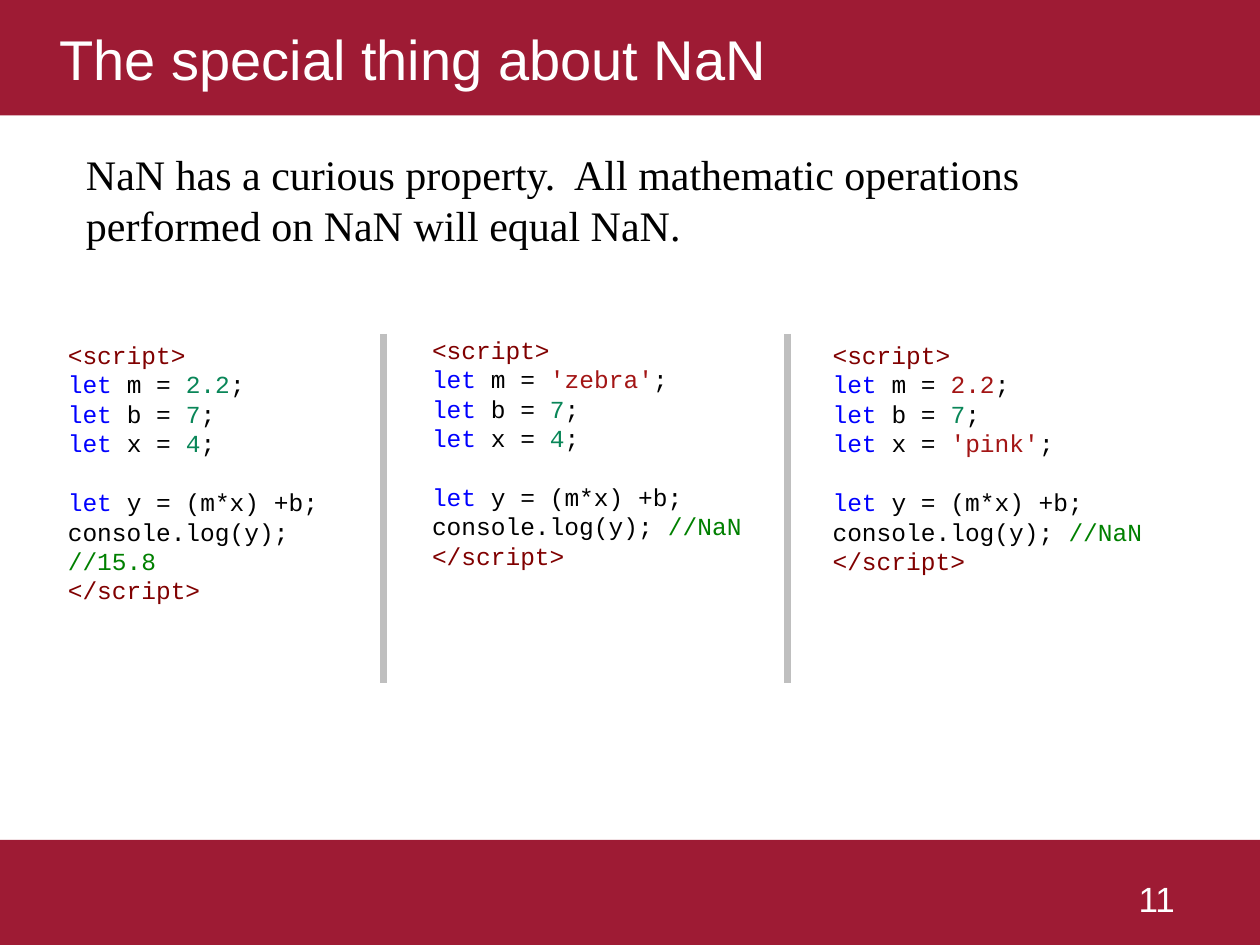
"""Build the slide on how NaN spreads through arithmetic."""
from lxml import etree
from pptx import Presentation
from pptx.dml.color import RGBColor
from pptx.enum.shapes import MSO_CONNECTOR, MSO_SHAPE
from pptx.enum.text import MSO_ANCHOR, MSO_AUTO_SIZE, PP_ALIGN
from pptx.oxml.ns import qn
from pptx.util import Pt

STRAIGHT, RECTANGLE = MSO_CONNECTOR.STRAIGHT, MSO_SHAPE.RECTANGLE
MIDDLE, NO_FIT = MSO_ANCHOR.MIDDLE, MSO_AUTO_SIZE.NONE
LEFT, RIGHT = PP_ALIGN.LEFT, PP_ALIGN.RIGHT

CRIMSON = RGBColor(0x9E, 0x1B, 0x34)
WHITE = RGBColor(0xFF, 0xFF, 0xFF)
BLACK = RGBColor(0, 0, 0)
GREY = RGBColor(0xBF, 0xBF, 0xBF)
TAG = RGBColor(0x80, 0, 0)
KEYWORD = RGBColor(0, 0, 0xFF)
NUMBER = RGBColor(0x09, 0x86, 0x58)
STRING = RGBColor(0xA3, 0x15, 0x15)
COMMENT = RGBColor(0, 0x80, 0)

TITLE = "The special thing about NaN"
STATEMENT = ("NaN has a curious property.  All mathematic operations "
             "performed on NaN will equal NaN.")
PAGE_NUMBER = "11 "
EXAMPLES = [
    {"at": (31.7, 190.8), "m": ("2.2", NUMBER), "x": ("4", NUMBER), "result": "//15.8"},
    {"at": (239.8, 187.9), "m": ("'zebra'", STRING), "x": ("4", NUMBER), "result": "//NaN"},
    {"at": (468.7, 190.8), "m": ("2.2", STRING), "x": ("'pink'", STRING), "result": "//NaN"},
]
DIVIDERS = [218.9, 450]
DIVIDER_TOP, DIVIDER_BOTTOM = 190.8, 390.2
CODE_SIZE = (198.7, 172)
BLANK_LINE = 16.8

TITLE_FONT = {"name": "Arial", "size": Pt(32), "color": WHITE}
PAGE_FONT = {"name": "Arial", "size": Pt(20), "color": WHITE}
STATEMENT_FONT = {"name": "Times New Roman", "size": Pt(24), "color": BLACK}
CODE_FONT = {"name": "Courier New", "size": Pt(14)}


def add_span(para, text, font):
    span = para.add_run()
    span.text = text
    for name, value in font.items():
        if name == "color":
            span.font.color.rgb = value
        else:
            setattr(span.font, name, value)


def add_text_box(slide, left, top, width, height):
    box = slide.shapes.add_textbox(Pt(left), Pt(top), Pt(width), Pt(height))
    box.text_frame.word_wrap = True
    return box.text_frame


def assignment(name, value):
    return [("let", KEYWORD), (f" {name} = ", BLACK), value, (";", BLACK)]


def code_lines(example):
    return [
        [("<script>", TAG)],
        assignment("m", example["m"]),
        assignment("b", ("7", NUMBER)),
        assignment("x", example["x"]),
        [("let", KEYWORD), (" y = (m*x) +b;", BLACK)],
        [("console.log(y); ", BLACK), (example["result"], COMMENT)],
        [("</script>", TAG)],
    ]


def add_example(slide, example):
    frame = add_text_box(slide, *example["at"], *CODE_SIZE)
    for index, line in enumerate(code_lines(example)):
        para = frame.add_paragraph() if index else frame.paragraphs[0]
        if line[-1][0].endswith("+b;"):
            para.space_before = Pt(BLANK_LINE)
        for text, color in line:
            add_span(para, text, {**CODE_FONT, "color": color})


def add_divider(slide, x):
    line = slide.shapes.add_connector(
        STRAIGHT, Pt(x), Pt(DIVIDER_TOP), Pt(x), Pt(DIVIDER_BOTTOM))
    line.line.color.rgb = GREY
    line.line.width = Pt(4)
    etree.SubElement(line._element.spPr, qn("a:effectLst"))


def add_title(slide):
    title = slide.shapes.title
    title.left, title.top, title.width, title.height = Pt(0), Pt(0), Pt(720), Pt(66)
    title.fill.solid()
    title.fill.fore_color.rgb = CRIMSON
    frame = title.text_frame
    frame.auto_size = NO_FIT
    frame.vertical_anchor = MIDDLE
    frame.margin_left = Pt(34)
    frame.paragraphs[0].alignment = LEFT
    add_span(frame.paragraphs[0], TITLE, TITLE_FONT)


def add_footer(slide):
    band = slide.shapes.add_shape(RECTANGLE, Pt(0), Pt(480), Pt(720), Pt(60))
    band.shadow.inherit = False
    band.fill.solid()
    band.fill.fore_color.rgb = CRIMSON
    band.line.fill.background()
    para = add_text_box(slide, 516, 498, 168, 24).paragraphs[0]
    para.alignment = RIGHT
    add_span(para, PAGE_NUMBER, PAGE_FONT)


def main():
    deck = Presentation()
    deck.slide_width, deck.slide_height = Pt(720), Pt(540)
    slide = deck.slides.add_slide(deck.slide_layouts[5])
    add_title(slide)
    add_footer(slide)
    statement = add_text_box(slide, 42, 81.4, 636, 65.5)
    add_span(statement.paragraphs[0], STATEMENT, STATEMENT_FONT)
    for x in DIVIDERS:
        add_divider(slide, x)
    for example in EXAMPLES:
        add_example(slide, example)
    deck.save("out.pptx")


if __name__ == "__main__":
    main()
